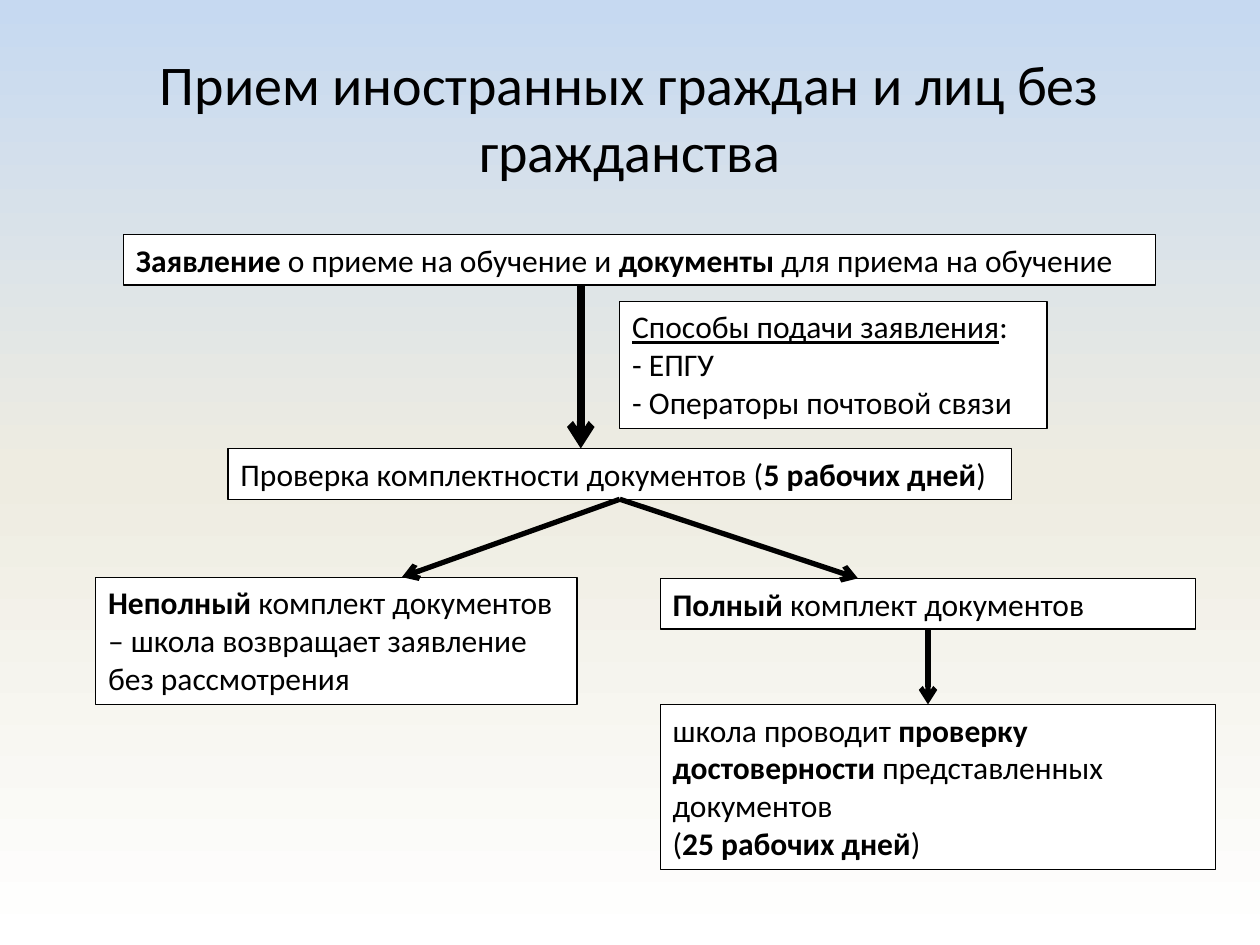
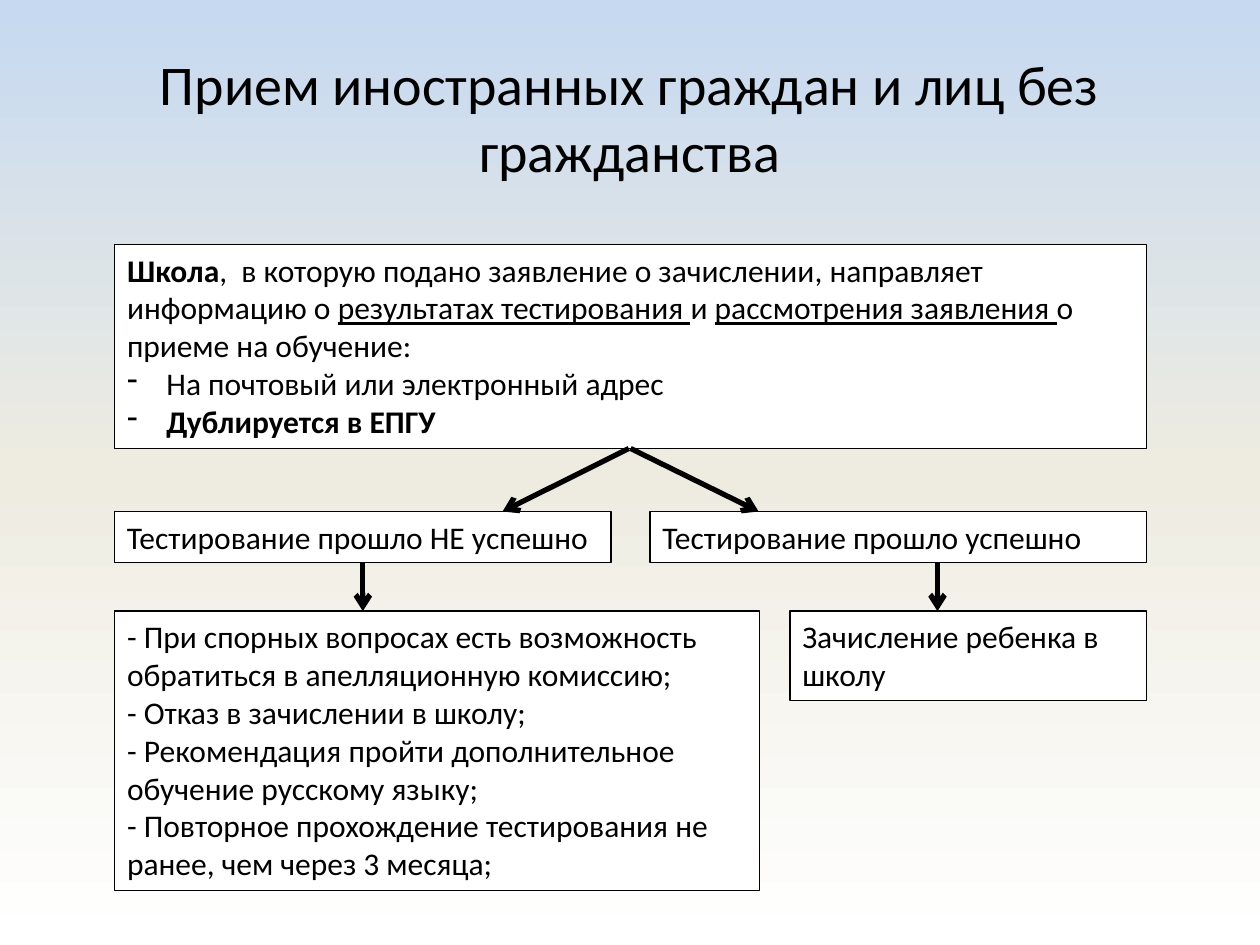
from dataclasses import dataclass

from lxml.etree import SubElement
from pptx import Presentation
from pptx.dml.color import RGBColor
from pptx.enum.shapes import MSO_CONNECTOR, MSO_SHAPE
from pptx.enum.text import MSO_ANCHOR, MSO_AUTO_SIZE, PP_ALIGN
from pptx.oxml.ns import qn
from pptx.util import Pt

COLORS = {"sky": "C6D9F1", "sand": "EEECE1", "white": "FFFFFF", "ink": "000000"}
BACKGROUND_STOPS = [(0, "sky"), (50, "sand"), (100, "white")]
FONT = "Calibri"
TITLE = "Прием иностранных граждан и лиц без гражданства"
TITLE_SIZE, BODY_SIZE = 32, 18
ROW_HEIGHT = 29
BULLET_INDENT = 22.5


@dataclass
class Box:
    """A rectangle in points."""
    left: float
    top: float
    width: float
    height: float

    def inner_box(self, x, y, width, height):
        return Box(self.left + x, self.top + y, width, height)

    def top_at(self, x):
        return self.left + x, self.top

    def bottom_at(self, x):
        return self.left + x, self.top + self.height

    @property
    def middle(self):
        return self.width / 2

    @property
    def lengths(self):
        return [Pt(n) for n in (self.left, self.top, self.width, self.height)]


def color(name):
    return RGBColor.from_string(COLORS[name])


def bold(text):
    return text, "bold"


def underlined(text):
    return text, "underline"


def add_run(paragraph, text, size, style=None):
    run = paragraph.add_run()
    run.text = text
    run.font.name = FONT
    run.font.size = Pt(size)
    run.font.color.rgb = color("ink")
    if style == "bold":
        run.font.bold = True
    elif style == "underline":
        run.font.underline = True


def fill_text(frame, paragraphs, size, align=PP_ALIGN.LEFT):
    """Each paragraph is a list of plain strings and (text, style) pairs."""
    frame.word_wrap = True
    for index, runs in enumerate(paragraphs):
        paragraph = frame.add_paragraph() if index else frame.paragraphs[0]
        paragraph.alignment = align
        for run in runs:
            text, style = (run, None) if isinstance(run, str) else run
            add_run(paragraph, text, size, style)


def add_dash_bullet(paragraph):
    properties = paragraph._p.get_or_add_pPr()
    properties.set("marL", str(Pt(BULLET_INDENT)))
    properties.set("indent", str(-Pt(BULLET_INDENT)))
    SubElement(properties, qn("a:buFontTx"))
    SubElement(properties, qn("a:buChar"), char="-")


def add_card(slide, box, *paragraphs):
    shape = slide.shapes.add_shape(MSO_SHAPE.RECTANGLE, *box.lengths)
    shape.shadow.inherit = False
    shape.fill.solid()
    shape.fill.fore_color.rgb = color("white")
    shape.line.color.rgb = color("ink")
    shape.line.width = Pt(0.75)
    frame = shape.text_frame
    fill_text(frame, paragraphs, BODY_SIZE)
    frame.vertical_anchor = MSO_ANCHOR.TOP
    frame.auto_size = MSO_AUTO_SIZE.SHAPE_TO_FIT_TEXT
    return shape


def add_arrow(slide, start, end, width=3):
    ends = [Pt(n) for n in (*start, *end)]
    connector = slide.shapes.add_connector(MSO_CONNECTOR.STRAIGHT, *ends)
    connector.line.color.rgb = color("ink")
    connector.line.width = Pt(width)
    properties = connector.element.spPr
    SubElement(properties.find(qn("a:ln")), qn("a:tailEnd"), type="arrow")
    SubElement(properties, qn("a:effectLst"))


def add_down_arrow(slide, upper, lower, x, width=3):
    """Vertical arrow between two boxes, x points from the upper box's left."""
    start = upper.bottom_at(x)
    add_arrow(slide, start, (start[0], lower.top), width)


def paint_background(slide):
    fill = slide.background.fill
    fill.gradient()
    fill.gradient_angle = 270
    stops = slide.element.find(".//" + qn("a:gsLst"))
    for stop in list(stops):
        stops.remove(stop)
    for percent, name in BACKGROUND_STOPS:
        stop = SubElement(stops, qn("a:gs"), pos=str(percent * 1000))
        SubElement(stop, qn("a:srgbClr"), val=COLORS[name])


def add_title(slide, box):
    frame = slide.shapes.add_textbox(*box.lengths).text_frame
    fill_text(frame, [[TITLE]], TITLE_SIZE, PP_ALIGN.CENTER)
    frame.vertical_anchor = MSO_ANCHOR.MIDDLE


def add_document_check(slide, area):
    application = area.inner_box(15.9, 0, 589.7, ROW_HEIGHT)
    methods = area.inner_box(299.5, 38.2, 244.1, 72.7)
    check = area.inner_box(75.6, 122.4, 447.8, ROW_HEIGHT)
    incomplete = area.inner_box(0, 195.9, 275, 72.7)
    complete = area.inner_box(322.6, 196.6, 306, ROW_HEIGHT)
    verification = area.inner_box(322.6, 268.6, 317.5, 94.3)

    add_card(slide, application,
             [bold("Заявление"), " о приеме на обучение и ", bold("документы"),
              " для приема на обучение"])
    add_card(slide, methods,
             [underlined("Способы подачи заявления"), ":"],
             ["- ЕПГУ"],
             ["- Операторы почтовой связи"])
    add_card(slide, check,
             ["Проверка комплектности документов (", bold("5 рабочих дней"), ")"])
    add_card(slide, incomplete,
             [bold("Неполный"),
              " комплект документов – школа возвращает заявление без рассмотрения"])
    add_card(slide, complete, [bold("Полный"), " комплект документов"])
    add_card(slide, verification,
             ["школа проводит ", bold("проверку достоверности "),
              "представленных документов"],
             ["(", bold("25 рабочих дней"), ")"])

    add_down_arrow(slide, application, check, 261.3, width=4.5)
    fork = check.bottom_at(check.middle)
    add_arrow(slide, fork, incomplete.top_at(175))
    add_arrow(slide, fork, complete.top_at(113))
    add_down_arrow(slide, complete, verification, complete.middle)


def add_test_outcome(slide, area):
    outcome_width, outcome_top, result_top = 283.7, 152.6, 209.5
    enrolment_width = 203.8
    notice = area.inner_box(0, 0, area.width, 116.6)
    failed = area.inner_box(0, outcome_top, outcome_width, ROW_HEIGHT)
    passed = area.inner_box(area.width - outcome_width, outcome_top,
                            outcome_width, ROW_HEIGHT)
    refusal = area.inner_box(0, result_top, 368.6, 159.8)
    enrolment = area.inner_box(area.width - enrolment_width, result_top,
                               enrolment_width, 51.1)

    notice_card = add_card(
        slide, notice,
        [bold("Школа"),
         ",  в которую подано заявление о зачислении, направляет информацию о ",
         underlined("результатах тестирования "), "и ",
         underlined("рассмотрения заявления "), "о приеме на обучение:"],
        ["На почтовый или электронный адрес"],
        [bold("Дублируется в ЕПГУ")])
    for paragraph in notice_card.text_frame.paragraphs[1:]:
        add_dash_bullet(paragraph)
    add_card(slide, passed, ["Тестирование прошло успешно"])
    add_card(slide, failed, ["Тестирование прошло НЕ успешно"])
    add_card(slide, refusal,
             ["- При спорных вопросах есть возможность обратиться в "
              "апелляционную комиссию;"],
             ["- Отказ в зачислении в школу;"],
             ["- Рекомендация пройти дополнительное обучение русскому языку;"],
             ["- Повторное прохождение тестирования не ранее, чем через 3 месяца;"])
    add_card(slide, enrolment, ["Зачисление ребенка в школу"])

    inner_offset = 62
    add_arrow(slide, notice.bottom_at(notice.middle - 1),
              failed.top_at(outcome_width - inner_offset))
    add_arrow(slide, notice.bottom_at(notice.middle), passed.top_at(inner_offset))
    add_down_arrow(slide, failed, refusal, failed.middle)
    add_down_arrow(slide, passed, enrolment, 164.2)


def main():
    presentation = Presentation()
    presentation.slide_width, presentation.slide_height = Pt(720), Pt(540)
    diagrams = [
        (add_document_check, Box(54.7, 133.9, 640.1, 362.9)),
        (add_test_outcome, Box(65.5, 139.7, 589.7, 369.3)),
    ]
    for add_diagram, area in diagrams:
        slide = presentation.slides.add_slide(presentation.slide_layouts[6])
        paint_background(slide)
        add_title(slide, Box(36, 21.6, 648, 90))
        add_diagram(slide, area)
    presentation.save("out.pptx")


if __name__ == "__main__":
    main()
